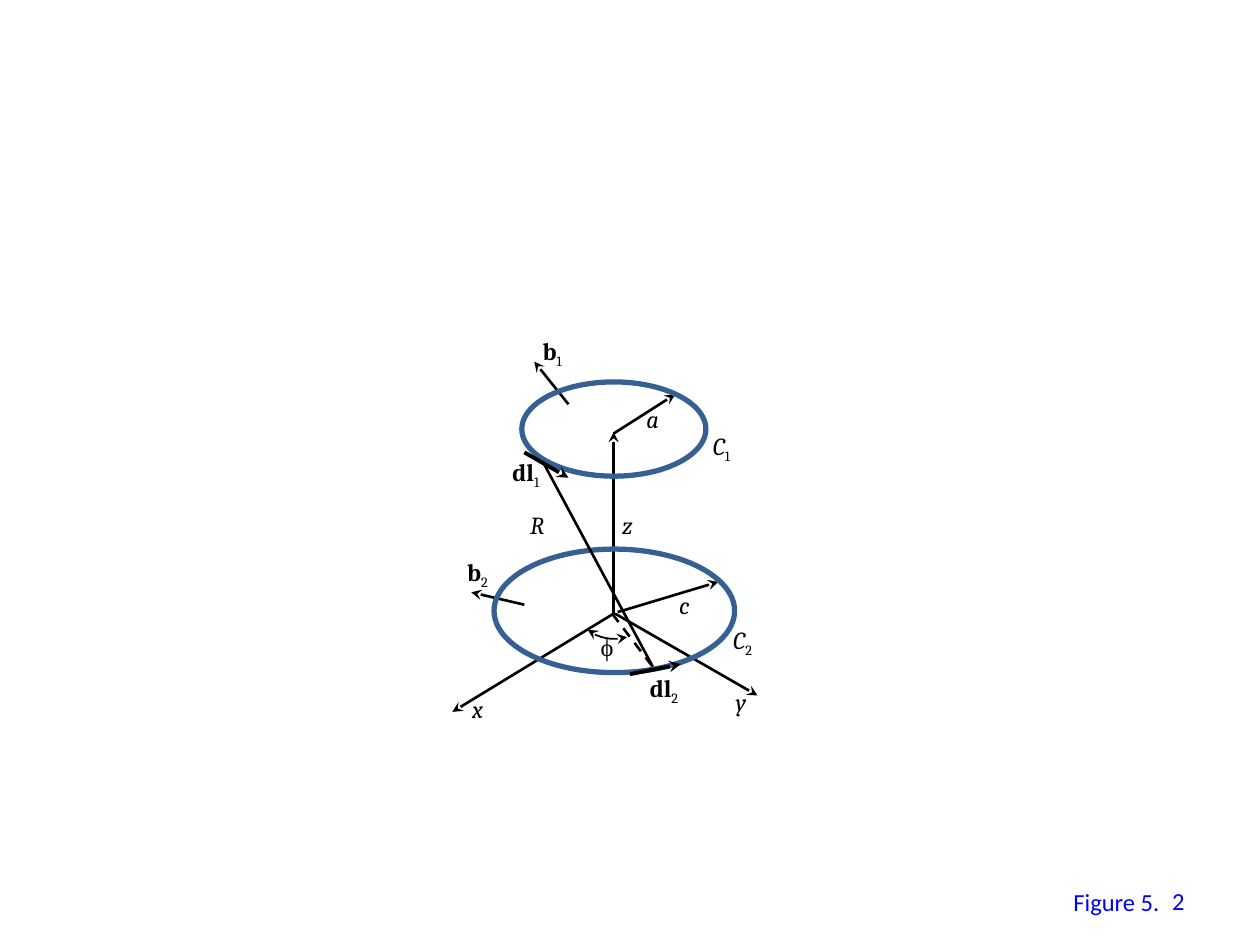
from dataclasses import dataclass

from lxml import etree
from pptx import Presentation
from pptx.dml.color import RGBColor
from pptx.enum.dml import MSO_LINE
from pptx.enum.shapes import MSO_CONNECTOR, MSO_SHAPE
from pptx.enum.text import MSO_ANCHOR, MSO_AUTO_SIZE, PP_ALIGN
from pptx.oxml.ns import qn
from pptx.util import Cm, Pt

STRAIGHT = MSO_CONNECTOR.STRAIGHT
OVAL = MSO_SHAPE.OVAL
ARC = MSO_SHAPE.ARC
DASH = MSO_LINE.DASH
MIDDLE = MSO_ANCHOR.MIDDLE
FIT = MSO_AUTO_SIZE.SHAPE_TO_FIT_TEXT
RIGHT = PP_ALIGN.RIGHT


@dataclass(frozen=True)
class Theme:
    ink: RGBColor = RGBColor(0, 0, 0)
    ring: RGBColor = RGBColor(0x37, 0x60, 0x92)
    note: RGBColor = RGBColor(0, 0, 0xFF)
    math: str = "Cambria"
    greek: str = "Times New Roman"
    plain: str = "Calibri"
    size: Pt = Pt(14)
    thin: Pt = Pt(1)
    mid: Pt = Pt(1.5)
    bold: Pt = Pt(2.25)
    thick: Pt = Pt(3)


class Figure:
    def __init__(self, slide, theme):
        self.shapes = slide.shapes
        self.theme = theme

    def tip(self, shape, *ends):
        for end in ends:
            etree.SubElement(shape.line._get_or_add_ln(), qn(f"a:{end}"), type="stealth")

    def line(self, start, end, width=None, arrow=True, dash=None):
        line = self.shapes.add_connector(STRAIGHT, *map(Cm, start + end))
        line.line.color.rgb = self.theme.ink
        line.line.width = width or self.theme.mid
        if dash:
            line.line.dash_style = dash
        if arrow:
            self.tip(line, "tailEnd")
        etree.SubElement(line._element.spPr, qn("a:effectLst"))

    def curve(self, kind, box, color, width):
        curve = self.shapes.add_shape(kind, *map(Cm, box))
        curve.shadow.inherit = False
        curve.fill.background()
        curve.line.color.rgb = color
        curve.line.width = width
        return curve

    def ring(self, box):
        self.curve(OVAL, box, self.theme.ring, self.theme.thick)

    def angle(self, box, start, end):
        arc = self.curve(ARC, box, self.theme.ink, self.theme.thin)
        arc.adjustments[0] = start
        arc.adjustments[1] = end
        self.tip(arc, "headEnd", "tailEnd")

    def text(self, words, left, top, width, height=0.86, face=None, color=None):
        box = self.shapes.add_textbox(Cm(left), Cm(top), Cm(width), Cm(height))
        box.text_frame.word_wrap = False
        box.text_frame.auto_size = FIT
        para = box.text_frame.paragraphs[0]
        para.add_run().text = words
        para.font.name = face or self.theme.math
        para.font.size = self.theme.size
        para.font.color.rgb = color or self.theme.ink
        return box

    def label(self, name, sub, left, top, width, strong=False):
        para = self.text(name, left, top, width).text_frame.paragraphs[0]
        main = para.runs[0].font
        main.bold = strong
        main.italic = not strong
        if sub:
            run = para.add_run()
            run.text = sub
            run._r.get_or_add_rPr().set("baseline", "-25000")

    def note(self, words, left, top, width, height=0.86):
        return self.text(words, left, top, width, height, self.theme.plain, self.theme.note)

    def number(self, words, left, top, width, height):
        frame = self.note(words, left, top, width, height).text_frame
        frame.word_wrap = True
        frame.auto_size = MSO_AUTO_SIZE.NONE
        frame.vertical_anchor = MIDDLE
        frame.paragraphs[0].alignment = RIGHT


def main():
    deck = Presentation()
    deck.slide_width = Cm(25.4)
    deck.slide_height = Cm(19.05)
    theme = Theme()
    fig = Figure(deck.slides.add_slide(deck.slide_layouts[6]), theme)

    fig.note("Figure 5.", 21.39, 17.75, 2.26)
    fig.line((12.34, 12.37), (13.21, 13.51), arrow=False, dash=DASH)

    arrows = [
        ((12.37, 12.42), (12.37, 8.71)),
        ((12.4, 12.37), (15.27, 14.02)),
        ((12.37, 12.37), (9.12, 14.35)),
        ((12.37, 8.74), (13.61, 7.95)),
        ((12.45, 12.34), (14.48, 11.73)),
        ((11.46, 8.15), (10.77, 7.29)),
        ((10.57, 12.19), (9.5, 11.94)),
    ]
    for start, end in arrows:
        fig.line(start, end)

    fig.ring((10.52, 7.7, 3.71, 1.9))
    fig.ring((9.96, 11.07, 4.85, 2.49))
    fig.angle((11.68, 11.84, 1.42, 1.04), 37.36, 88.85)
    fig.line((10.57, 9.12), (11.46, 9.63), theme.bold)
    fig.line((12.7, 13.59), (13.72, 13.39), theme.bold)
    fig.line((13.16, 13.44), (10.95, 9.32), arrow=False)

    scalars = [
        ("x", "", 9.27, 13.87, 0.86),
        ("y", "", 14.58, 13.72, 0.86),
        ("z", "", 12.29, 10.16, 0.84),
        ("a", "", 12.78, 8.03, 0.89),
        ("c", "", 13.44, 11.76, 0.86),
        ("R", "", 10.44, 10.16, 0.94),
        ("C", "1", 14.12, 8.56, 1.14),
        ("C", "2", 14.53, 12.47, 1.14),
    ]
    for item in scalars:
        fig.label(*item)

    vectors = [
        ("dl", "1", 10.08, 9.09, 1.09),
        ("dl", "2", 12.85, 13.44, 1.12),
        ("b", "1", 10.69, 6.65, 0.97),
        ("b", "2", 9.17, 11.1, 0.97),
    ]
    for item in vectors:
        fig.label(*item, strong=True)

    fig.text("ϕ", 11.86, 12.62, 0.79, face=theme.greek)
    fig.number("2", 18.21, 17.65, 5.92, 1.02)
    deck.save("out.pptx")


if __name__ == "__main__":
    main()
